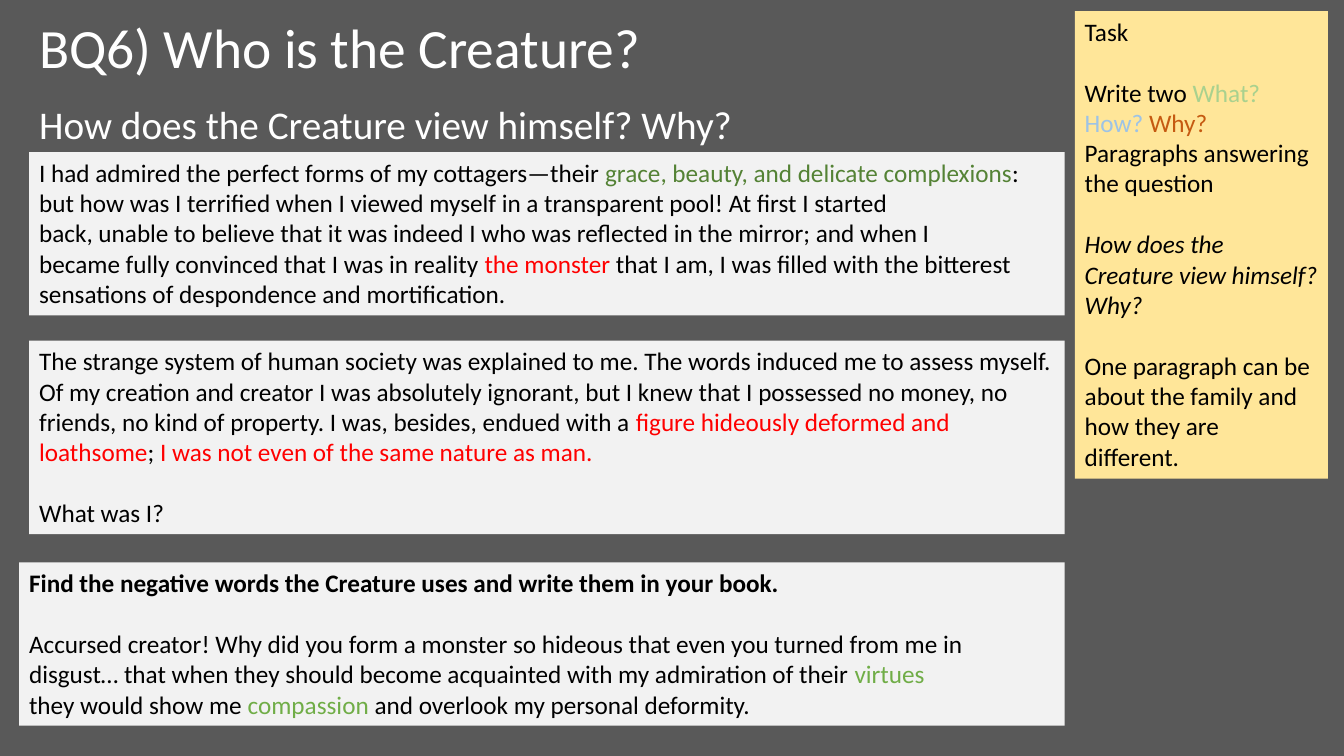
from pptx import Presentation
from pptx import util as u
from pptx.dml.color import RGBColor
from pptx.enum import text

BLACK, WHITE, RED = "000000", "FFFFFF", "FF0000"
PALE, YELLOW, LEAF = "F2F2F2", "FFE699", "70AD47"
BLANK_LINE = 22

ADMIRATION = [
    (0, [("I had admired the perfect forms of my cottagers—their ", {}),
         ("grace, beauty, and delicate complexions", {"color": "548235"}),
         (":", {})]),
    (0, [("but how was I terrified when I viewed myself in a transparent pool! "
          "At first I started", {})]),
    (0, [("back, unable to believe that it was indeed I who was reflected in the "
          "mirror; and when I", {})]),
    (0, [("became fully convinced that I was in reality ", {}),
         ("the monster ", {"color": RED}),
         ("that I am, I was filled with the bitterest", {})]),
    (0, [("sensations of despondence and mortification.", {})]),
]
SOCIETY = [
    (0, [("The strange system of human society was explained to me. The words "
          "induced me to assess myself. Of my creation and creator I was "
          "absolutely ignorant, but I knew that I possessed no money, no friends, "
          "no kind of property. I was, besides, endued with a ", {}),
         ("figure hideously deformed and loathsome", {"color": RED}),
         ("; ", {}),
         ("I was not even of the same nature as man.", {"color": RED})]),
    (BLANK_LINE, [("What was I?", {})]),
]
NEGATIVE_WORDS = [
    (0, [("Find the negative words the Creature uses and write them in your book.",
          {"bold": True})]),
    (BLANK_LINE, [("Accursed creator! Why did you form a monster so hideous that "
                   "even you turned from me in disgust… that when they should "
                   "become acquainted with my admiration of their ", {}),
                  ("virtues", {"color": LEAF})]),
    (0, [("they would show me ", {}),
         ("compassion", {"color": LEAF}),
         (" and overlook my personal deformity.", {})]),
]
TASK = [
    (0, [("Task", {})]),
    (BLANK_LINE, [("Write two ", {}),
                  ("What? ", {"color": "A9D18E"}),
                  ("How? ", {"color": "9DC3E6"}),
                  ("Why? ", {"color": "C55A11"}),
                  ("Paragraphs answering the question", {})]),
    (BLANK_LINE, [("How does the Creature view himself? Why?", {"italic": True})]),
    (BLANK_LINE, [("One paragraph can be about the family and how they are "
                   "different.", {})]),
]


def paint(fill, color):
    fill.solid()
    fill.fore_color.rgb = RGBColor.from_string(color)


def add_span(para, words, size, color=BLACK, **styles):
    span = para.add_run()
    span.text = words
    formats = {"name": "Calibri", "size": u.Pt(size), **styles}
    for name, value in formats.items():
        setattr(span.font, name, value)
    paint(span.font.fill, color)


def add_box(page, area, anchor):
    box = page.shapes.add_textbox(*(u.Inches(length) for length in area))
    box.text_frame.word_wrap = True
    box.text_frame.vertical_anchor = anchor
    return box


def add_heading(page, area, words, size, anchor):
    box = add_box(page, area, anchor)
    para = box.text_frame.paragraphs[0]
    para.line_spacing = 0.9
    add_span(para, words, size, WHITE)


def add_panel(page, area, fill, paragraphs):
    box = add_box(page, area, text.MSO_ANCHOR.TOP)
    paint(box.fill, fill)
    frame = box.text_frame
    frame.auto_size = text.MSO_AUTO_SIZE.SHAPE_TO_FIT_TEXT
    for index, (gap, spans) in enumerate(paragraphs):
        para = frame.add_paragraph() if index else frame.paragraphs[0]
        para.space_before = u.Pt(gap)
        for words, styles in spans:
            add_span(para, words, 18, **styles)


def build_page(deck):
    page = deck.slides.add_slide(deck.slide_layouts[6])
    paint(page.background.fill, "595959")
    add_heading(page, (0.29, 0.29, 11.26, 0.42), "BQ6) Who is the Creature?",
                39.6, text.MSO_ANCHOR.MIDDLE)
    add_heading(page, (0.29, 1, 12.88, 6.35),
                "How does the Creature view himself? Why?",
                28, text.MSO_ANCHOR.TOP)
    add_panel(page, (0.29, 1.51, 10.27, 1.62), PALE, ADMIRATION)
    add_panel(page, (0.29, 3.38, 10.27, 1.92), PALE, SOCIETY)
    add_panel(page, (0.19, 5.58, 10.37, 1.62), PALE, NEGATIVE_WORDS)
    add_panel(page, (10.66, 0.11, 2.51, 4.64), YELLOW, TASK)


def main():
    deck = Presentation()
    deck.slide_width = u.Inches(13.33)
    deck.slide_height = u.Inches(7.5)
    build_page(deck)
    deck.save("out.pptx")


if __name__ == "__main__":
    main()
